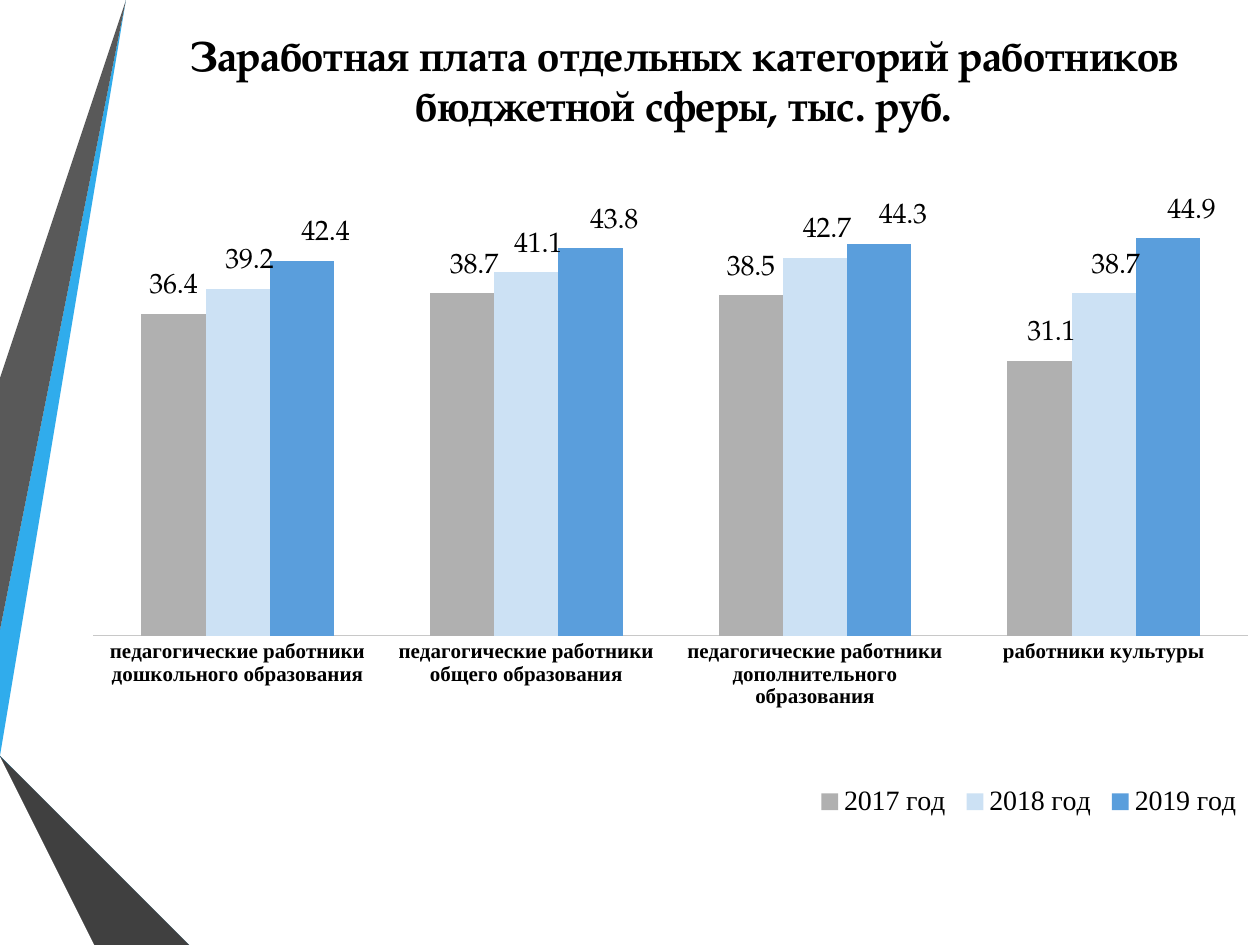
import pptx
import pptx.chart.data
import pptx.dml.color
import pptx.enum.chart
import pptx.enum.text
import pptx.oxml
import pptx.oxml.ns
import pptx.util
from pptx.util import Inches

SERIF = "TeX Gyre Pagella"
TIMES = "Times New Roman"

RIBBONS = [
    ("30ACEC", [(0, 5.44), (0, 5.75), (0.22, 5.79), (1.17, 0), (0.89, 0)]),
    ("595959", [(0.83, 0), (0.55, 0), (0, 3.36), (0, 5.06)]),
    ("262626", [(0, 6.19), (0, 6.21), (0.93, 7.5), (0.99, 7.5)]),
    ("0C5A82", [(0, 5.79), (0, 5.8), (1.56, 7.5), (1.63, 7.5)]),
    ("1287C3", [(0, 5.79), (1.63, 7.5), (2.33, 7.5), (0.22, 5.79), (0, 5.75)]),
    ("404040", [(0, 6.19), (0.99, 7.5), (1.51, 7.5), (0, 5.86)]),
]

CATEGORIES = [
    "педагогические работники дошкольного образования",
    "педагогические работники общего образования",
    "педагогические работники дополнительного образования",
    "работники культуры",
]

SERIES = [
    ("2017 год", "B0B0B0", [36.4, 38.7, 38.5, 31.1], [0, 0.01, 0, 0.01]),
    ("2018 год", "CCE1F4", [39.2, 41.1, 42.7, 38.7], [0.01] * 4),
    ("2019 год", "5A9EDC", [42.4, 43.8, 44.3, 44.9], [0.02] * 4),
]


def rgb(value):
    return pptx.dml.color.RGBColor.from_string(value)


def style_font(font, size, name, bold=False):
    font.size = pptx.util.Pt(size)
    font.name = name
    font.bold = bold
    font.color.rgb = rgb("000000")


def add_ribbon(s, color, points):
    builder = s.shapes.build_freeform(*points[0], scale=Inches(1))
    builder.add_line_segments(points[1:], close=True)
    sp = builder.convert_to_shape()
    sp.shadow.inherit = False
    sp.fill.solid()
    sp.fill.fore_color.rgb = rgb(color)
    sp.line.fill.background()


def add_title(s, text):
    sp = s.shapes.title
    sp.left, sp.top = Inches(0.98), Inches(0.18)
    sp.width, sp.height = Inches(8.9), Inches(0.91)
    tf = sp.text_frame
    tf.word_wrap = True
    tf.auto_size = pptx.enum.text.MSO_AUTO_SIZE.SHAPE_TO_FIT_TEXT
    tf.vertical_anchor = pptx.enum.text.MSO_ANCHOR.MIDDLE
    p = tf.paragraphs[0]
    p.text = text
    p.alignment = pptx.enum.text.PP_ALIGN.CENTER
    style_font(p.font, 24, SERIF, True)


def set_layout(parent, index, **values):
    for old in parent.findall(pptx.oxml.ns.qn("c:layout")):
        parent.remove(old)
    body = "".join(f'<c:{key} val="{value}"/>' for key, value in values.items())
    parent.insert(index, pptx.oxml.parse_xml(
        f'<c:layout {pptx.oxml.ns.nsdecls("c")}>'
        f"<c:manualLayout>{body}</c:manualLayout></c:layout>"))


def format_series(ser, color, shifts):
    ser.format.fill.solid()
    ser.format.fill.fore_color.rgb = rgb(color)
    labels = ser.data_labels
    labels.show_value = True
    style_font(labels.font, 16, SERIF)
    for i in range(len(shifts)):
        label = ser.points[i].data_label
        style_font(label.font, 16, SERIF)
        label.position = pptx.enum.chart.XL_LABEL_POSITION.OUTSIDE_END
    for element, dx in zip(ser._element.iter(pptx.oxml.ns.qn("c:dLbl")), shifts):
        set_layout(element, 1, x=dx, y=-0.01)


def format_axes(chart):
    axis = chart.category_axis
    axis.major_tick_mark = pptx.enum.chart.XL_TICK_MARK.NONE
    axis.format.line.color.rgb = rgb("C8C8C8")
    axis.format.line.width = pptx.util.Pt(0.75)
    style_font(axis.tick_labels.font, 12, TIMES, True)
    axis = chart.value_axis
    axis.minimum_scale, axis.maximum_scale = 0, 50
    axis.has_major_gridlines = False
    axis.visible = False


def add_legend(chart):
    chart.has_legend = True
    legend = chart.legend
    legend.position = pptx.enum.chart.XL_LEGEND_POSITION.TOP
    legend.include_in_layout = False
    style_font(legend.font, 16, TIMES)
    set_layout(legend._element, 1, xMode="edge", yMode="edge",
               x=0.62, y=0.89, w=0.37, h=0.07)


def add_salary_chart(s):
    data = pptx.chart.data.CategoryChartData()
    data.categories = CATEGORIES
    for name, color, values, shifts in SERIES:
        data.add_series(name, values)
    chart = s.shapes.add_chart(
        pptx.enum.chart.XL_CHART_TYPE.COLUMN_CLUSTERED,
        Inches(0.59), Inches(1.09), Inches(9.41), Inches(5.7), data).chart
    chart.has_title = False
    style_font(chart.font, 18, "Cabin")
    plot = chart.plots[0]
    plot.vary_by_categories = False
    plot.gap_width = 150
    plot.overlap = 0
    for ser, (name, color, values, shifts) in zip(plot.series, SERIES):
        format_series(ser, color, shifts)
    format_axes(chart)
    add_legend(chart)
    area = chart._chartSpace.find(".//" + pptx.oxml.ns.qn("c:plotArea"))
    set_layout(area, 0, layoutTarget="inner", xMode="edge", yMode="edge",
               x=0.016, y=0.078, w=0.974, h=0.616)


def main():
    prs = pptx.Presentation()
    prs.slide_width, prs.slide_height = Inches(10), Inches(7.5)
    s = prs.slides.add_slide(prs.slide_layouts[5])
    for color, points in RIBBONS:
        add_ribbon(s, color, points)
    add_title(s, "Заработная плата отдельных категорий работников "
                 "бюджетной сферы, тыс. руб.")
    add_salary_chart(s)
    prs.save("out.pptx")


if __name__ == "__main__":
    main()
